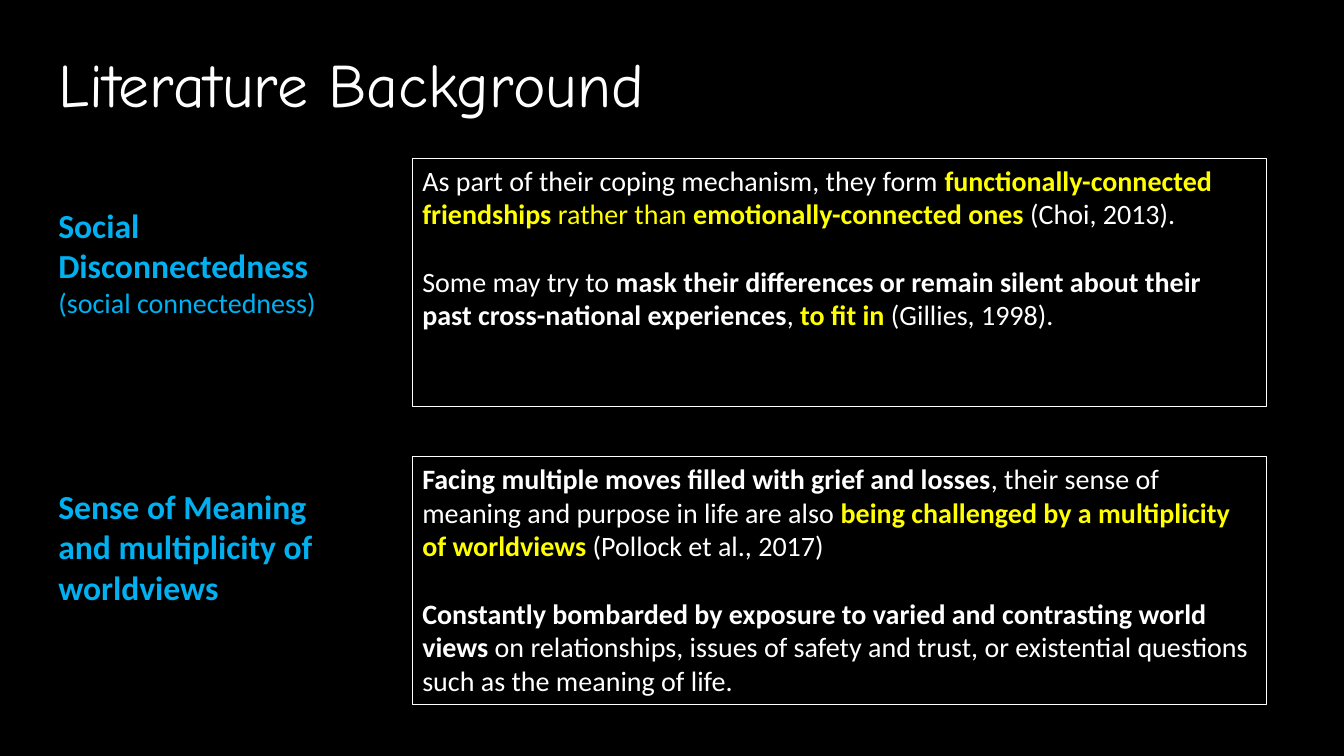
from dataclasses import dataclass

from pptx import Presentation
from pptx import util as u
from pptx.dml.color import RGBColor
from pptx.enum import shapes, text


@dataclass(frozen=True)
class Theme:
    background: str = "000000"
    body: str = "FFFFFF"
    highlight: str = "FFFF00"
    label: str = "00B0F0"
    title_font: str = "Comic Neue"
    body_font: str = "Calibri"
    title_size: int = 44
    label_size: int = 24
    body_size: int = 20
    paragraph_gap: int = 24
    outline: float = 0.75


THEME = Theme()

# Run styles: colour, bold
PLAIN = (THEME.body, False)
STRONG = (THEME.body, True)
YELLOW = (THEME.highlight, False)
KEY = (THEME.highlight, True)

LEFT = 0.48
PANEL_LEFT, PANEL_WIDTH, PANEL_HEIGHT = 4.09, 8.47, 2.46

SOCIAL_FINDINGS = [
    [
        ("As part of their coping mechanism, they form ", PLAIN),
        ("functionally-connected friendships", KEY),
        (" rather than ", YELLOW),
        ("emotionally-connected ones ", KEY),
        ("(Choi, 2013).", PLAIN),
    ],
    [
        ("Some may try to ", PLAIN),
        ("mask their differences or remain silent about their past "
         "cross-national experiences", STRONG),
        (", ", PLAIN),
        ("to fit in ", KEY),
        ("(Gillies, 1998).", PLAIN),
    ],
]

MEANING_FINDINGS = [
    [
        ("Facing multiple moves filled with grief and losses", STRONG),
        (", their sense of meaning and purpose in life are also ", PLAIN),
        ("being challenged by a multiplicity of worldviews ", KEY),
        ("(Pollock et al., 2017)", PLAIN),
    ],
    [
        ("Constantly bombarded by exposure to varied and contrasting world "
         "views", STRONG),
        (" on relationships, issues of safety and trust, or existential "
         "questions such as the meaning of life.", PLAIN),
    ],
]


def style_font(font, size, color, bold=False, name=THEME.body_font):
    font.name = name
    font.size = u.Pt(size)
    font.bold = bold
    font.color.rgb = RGBColor.from_string(color)


def add_text_frame(slide, left, top, width, height):
    box = slide.shapes.add_textbox(
        u.Inches(left), u.Inches(top), u.Inches(width), u.Inches(height))
    box.text_frame.word_wrap = True
    return box.text_frame


def add_title(slide, title):
    frame = add_text_frame(slide, LEFT, 0.16, 9.42, 1.41)
    frame.vertical_anchor = text.MSO_ANCHOR.MIDDLE
    frame.text = title
    paragraph = frame.paragraphs[0]
    paragraph.line_spacing = 0.9
    style_font(paragraph.runs[0].font, THEME.title_size, THEME.body,
               name=THEME.title_font)


def add_label(slide, top, width, height, heading, note=None):
    frame = add_text_frame(slide, LEFT, top, width, height)
    frame.text = heading
    style_font(frame.paragraphs[0].runs[0].font, THEME.label_size,
               THEME.label, bold=True)
    if note:
        paragraph = frame.add_paragraph()
        paragraph.text = note
        style_font(paragraph.runs[0].font, THEME.body_size, THEME.label)


def add_panel(slide, top, findings):
    panel = slide.shapes.add_shape(
        shapes.MSO_SHAPE.RECTANGLE, u.Inches(PANEL_LEFT), u.Inches(top),
        u.Inches(PANEL_WIDTH), u.Inches(PANEL_HEIGHT))
    panel.shadow.inherit = False
    panel.fill.background()
    panel.line.color.rgb = RGBColor.from_string(THEME.body)
    panel.line.width = u.Pt(THEME.outline)
    frame = panel.text_frame
    frame.word_wrap = True
    frame.vertical_anchor = text.MSO_ANCHOR.TOP
    for index, finding in enumerate(findings):
        paragraph = frame.add_paragraph() if index else frame.paragraphs[0]
        paragraph.alignment = text.PP_ALIGN.LEFT
        if index:
            paragraph.space_before = u.Pt(THEME.paragraph_gap)
        for words, (color, bold) in finding:
            run = paragraph.add_run()
            run.text = words
            style_font(run.font, THEME.body_size, color, bold)


def main():
    presentation = Presentation()
    presentation.slide_width = u.Inches(13.33)
    presentation.slide_height = u.Inches(7.5)
    slide = presentation.slides.add_slide(presentation.slide_layouts[6])
    slide.background.fill.solid()
    slide.background.fill.fore_color.rgb = RGBColor.from_string(
        THEME.background)

    add_title(slide, "Literature Background")

    # Social disconnectedness
    add_label(slide, 1.98, 3.39, 1.25, "Social Disconnectedness",
              "(social connectedness)")
    add_panel(slide, 1.57, SOCIAL_FINDINGS)

    # Sense of meaning
    add_label(slide, 4.77, 3.22, 1.31,
              "Sense of Meaning and multiplicity of worldviews")
    add_panel(slide, 4.53, MEANING_FINDINGS)

    presentation.save("out.pptx")


if __name__ == "__main__":
    main()
